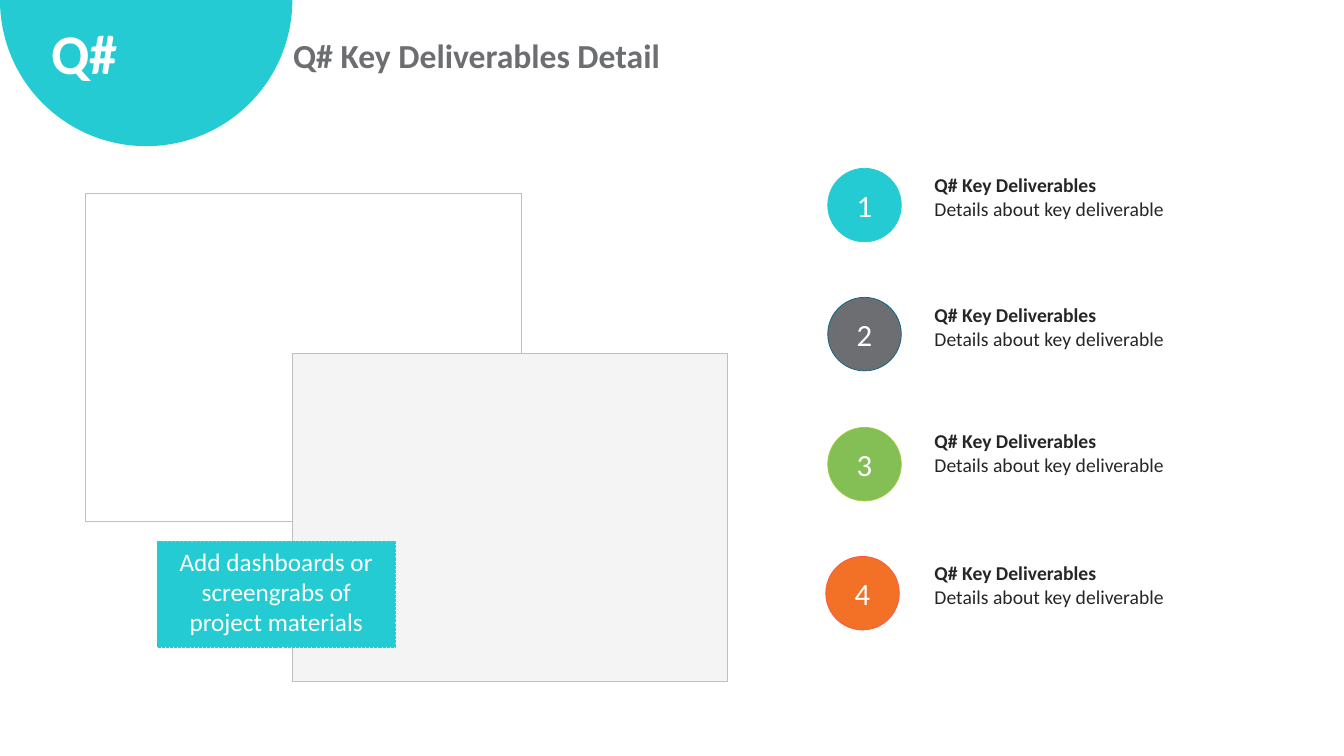
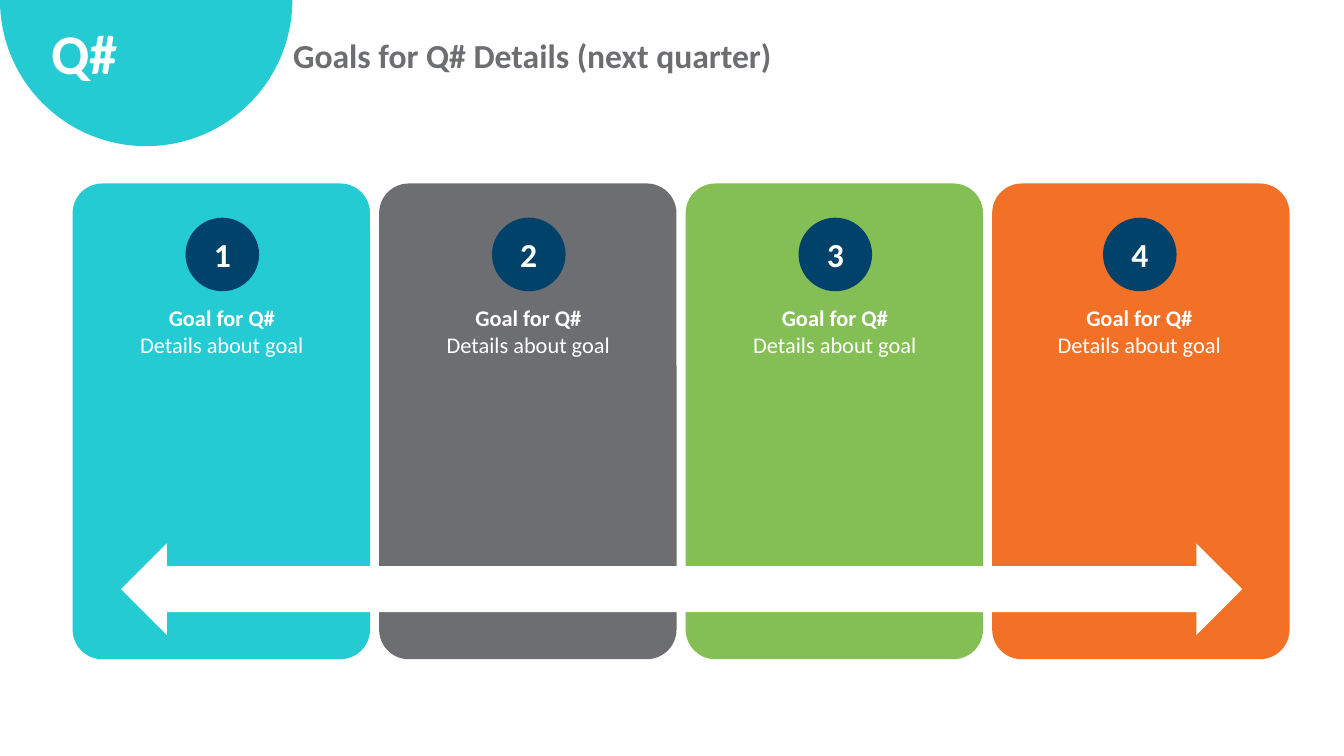
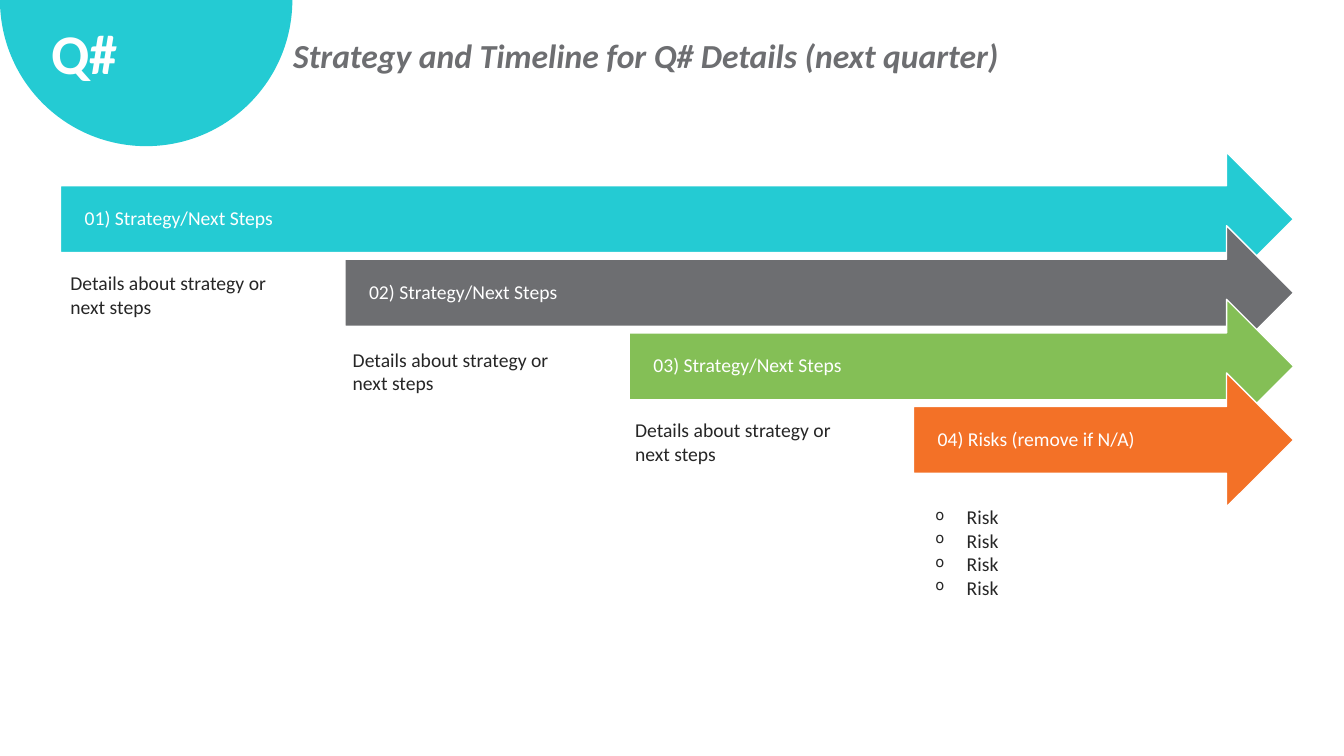
from lxml.etree import SubElement
from pptx import Presentation
from pptx.dml.color import RGBColor
from pptx.enum.dml import MSO_LINE
from pptx.enum.shapes import MSO_SHAPE as Shape
from pptx.enum.text import MSO_ANCHOR as Anchor, PP_ALIGN as Align
from pptx.oxml.ns import qn
from pptx.util import Inches, Pt

FONT = "Calibri"
COLORS = {
    "teal": "24CBD3", "gray": "6D6E71", "green": "84BF56", "orange": "F37127",
    "navy": "00426A", "white": "FFFFFF", "text": "262626", "pale": "F4F4F4",
    "border": "BFBFBF", "blue edge": "096087", "lime edge": "A0CD3A",
    "red edge": "FE5348",
}
SERIES = ("teal", "gray", "green", "orange")


def rgb(name):
    return RGBColor.from_string(COLORS[name])


def add_bullet(paragraph, color, indent=0.31):
    properties = paragraph._p.get_or_add_pPr()
    properties.set("marL", str(Inches(indent)))
    properties.set("indent", str(-Inches(indent)))
    bullet_color = SubElement(properties, qn("a:buClr"))
    SubElement(bullet_color, qn("a:srgbClr"), val=COLORS[color])
    SubElement(properties, qn("a:buSzPct"), val="75000")
    SubElement(properties, qn("a:buChar"), char="o")


def write(shape, *lines, size=14, color="text", bold=False, bold_first=False,
          italic=False, align=Align.LEFT, anchor=Anchor.TOP, spacing=None,
          bullets=False, insets=(0.1, 0.05, 0.1, 0.05)):
    """Fill a shape with one paragraph per line."""
    frame = shape.text_frame
    frame.word_wrap = True
    frame.vertical_anchor = anchor
    (frame.margin_left, frame.margin_top,
     frame.margin_right, frame.margin_bottom) = map(Inches, insets)
    for index, line in enumerate(lines):
        paragraph = frame.add_paragraph() if index else frame.paragraphs[0]
        paragraph.alignment = align
        if spacing:
            paragraph.line_spacing = spacing
        if bullets:
            add_bullet(paragraph, color)
        run = paragraph.add_run()
        run.text = line
        font = run.font
        font.name, font.size = FONT, Pt(size)
        font.bold = bold or (bold_first and index == 0)
        font.italic = italic
        font.color.rgb = rgb(color)


class Deck:
    def __init__(self):
        self.presentation = Presentation()
        self.presentation.slide_width = Inches(13.33)
        self.presentation.slide_height = Inches(7.5)
        self.slide = None

    def start_slide(self, title, title_width=6.57, italic=False):
        """Add a slide with the quarter badge and its title."""
        layout = self.presentation.slide_layouts[6]
        self.slide = self.presentation.slides.add_slide(layout)
        badge = self.shape(Shape.PIE, 0, -1.45, 2.9, 2.9, "teal")
        badge.adjustments[0], badge.adjustments[1] = 0, 108
        self.text(0.08, 0.08, 1.52, 0.87, "Q#", size=40, color="white",
                  bold=True, align=Align.CENTER, anchor=Anchor.MIDDLE)
        self.text(2.81, 0.37, title_width, 0.43, title, size=24, color="gray",
                  bold=True, italic=italic, spacing=0.8)

    def shape(self, kind, left, top, width, height, fill, line=None, weight=0):
        shape = self.slide.shapes.add_shape(
            kind, Inches(left), Inches(top), Inches(width), Inches(height))
        shape.shadow.inherit = False
        shape.fill.solid()
        shape.fill.fore_color.rgb = rgb(fill)
        if line:
            shape.line.color.rgb = rgb(line)
            shape.line.width = Pt(weight)
        else:
            shape.line.fill.background()
        return shape

    def text(self, left, top, width, height, *lines, **style):
        box = self.slide.shapes.add_textbox(
            Inches(left), Inches(top), Inches(width), Inches(height))
        write(box, *lines, **style)

    def number(self, value, left, top, fill, line=None, **style):
        circle = self.shape(Shape.OVAL, left, top, 0.73, 0.73, fill, line, 0.5)
        write(circle, str(value), color="white", align=Align.CENTER,
              anchor=Anchor.MIDDLE, **style)

    def arrow(self, label, left, top, right, fill):
        arrow = self.shape(Shape.RIGHT_ARROW, left, top, right - left, 1.33,
                           fill, "white", 1)
        write(arrow, label, color="white", anchor=Anchor.MIDDLE, spacing=0.9,
              insets=(0.24, 0, 0.24, 0))


def build_deliverables(deck):
    deck.start_slide("Q# Key Deliverables Detail")

    # Numbered deliverables
    edges = ("teal", "blue edge", "lime edge", "red edge")
    circle_lefts = (8.21, 8.21, 8.21, 8.19)
    circle_tops = (1.67, 2.95, 4.24, 5.52)
    label_tops = (1.67, 2.96, 4.21, 5.52)
    rows = zip(SERIES, edges, circle_lefts, circle_tops, label_tops)
    for value, (fill, edge, left, top, label_top) in enumerate(rows, 1):
        deck.number(value, left, top, fill, edge, size=22)
        deck.text(9.17, label_top, 4.1, 0.57, "Q# Key Deliverables",
                  "Details about key deliverable", bold_first=True)

    # Screen areas and their callout
    for left, top, fill in ((0.85, 1.92, "white"), (2.9, 3.51, "pale")):
        deck.shape(Shape.RECTANGLE, left, top, 4.32, 3.25, fill, "border")
    callout = deck.shape(Shape.RECTANGLE, 1.56, 5.37, 2.36, 1.05, "teal",
                         "teal", 0.75)
    callout.line.dash_style = MSO_LINE.SQUARE_DOT
    write(callout, "Add dashboards or screengrabs of project materials",
          size=18, color="white", align=Align.CENTER)


def build_goals(deck):
    deck.start_slide("Goals for Q# Details (next quarter)")

    # Cards with the arrow across them
    for index, fill in enumerate(SERIES):
        card = deck.shape(Shape.ROUNDED_RECTANGLE, 0.72 + 3.04 * index, 1.82,
                          2.95, 4.72, fill)
        card.adjustments[0] = 0.1
    deck.shape(Shape.LEFT_RIGHT_ARROW, 1.2, 5.39, 11.12, 0.91, "white")

    # Goals
    for value, center in enumerate((2.2, 5.24, 8.28, 11.3), 1):
        deck.number(value, center - 0.36, 2.16, "navy", size=24, bold=True)
        deck.text(center - 1.25, 2.97, 2.5, 1.84, "Goal for Q#",
                  "Details about goal", size=16, color="white",
                  bold_first=True, align=Align.CENTER)


def build_timeline(deck):
    deck.start_slide("Strategy and Timeline for Q# Details (next quarter)",
                     title_width=8.73, italic=True)

    # Staggered arrows
    labels = ["01) Strategy/Next Steps", "02) Strategy/Next Steps",
              "03) Strategy/Next Steps", "04) Risks (remove if N/A)"]
    for index, (label, fill) in enumerate(zip(labels, SERIES)):
        deck.arrow(label, 0.6 + 2.82 * index, 1.51 + 0.73 * index, 12.83, fill)

    # Details and risks
    for index, top in enumerate((2.64, 3.4, 4.1)):
        deck.text(0.6 + 2.8 * index, top, 2.4, 1.84,
                  "Details about strategy or next steps")
    deck.text(9.18, 4.96, 2.68, 1.04, *["Risk"] * 4, bullets=True)


def main():
    deck = Deck()
    build_deliverables(deck)
    build_goals(deck)
    build_timeline(deck)
    deck.presentation.save("out.pptx")


if __name__ == "__main__":
    main()
